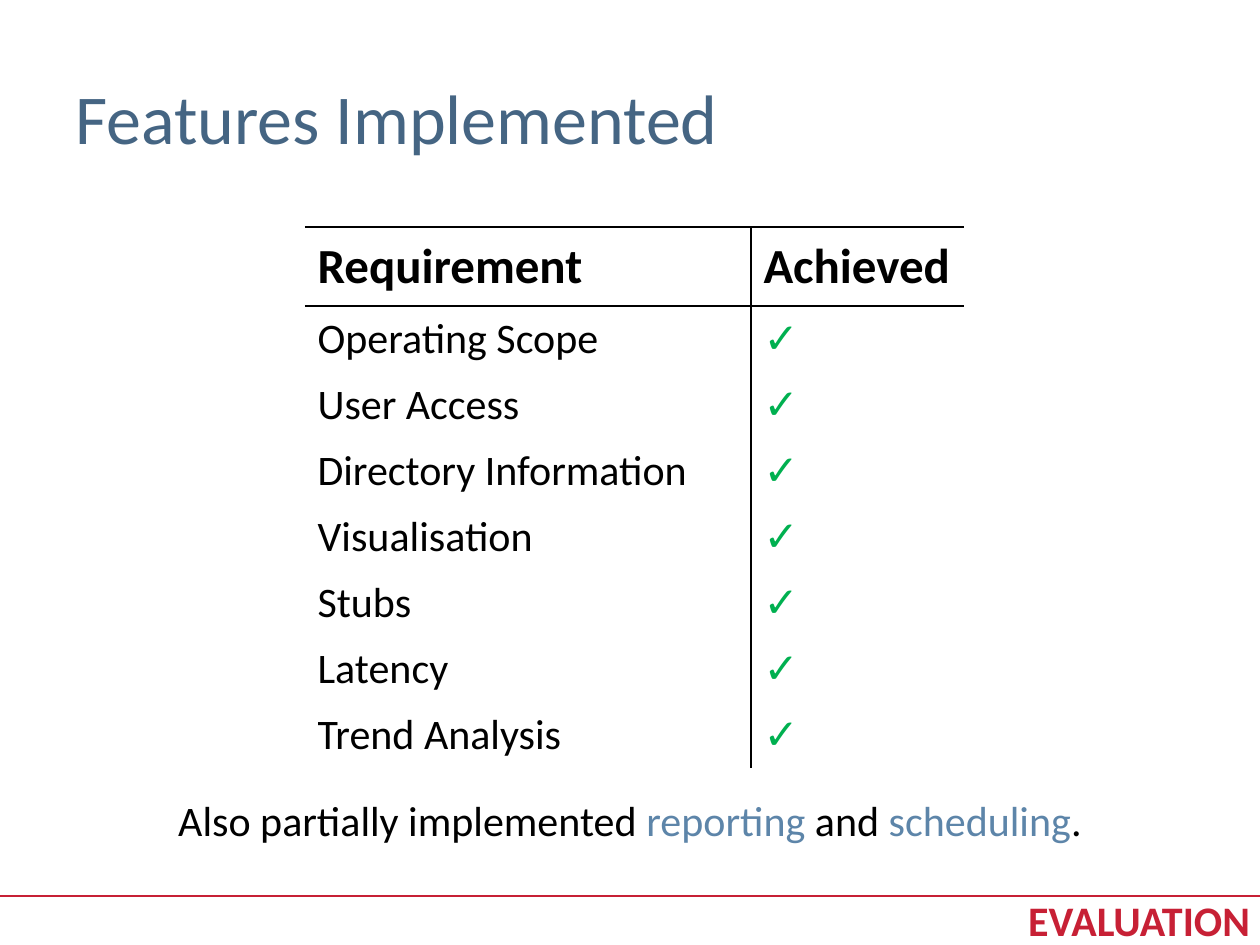
import pptx
import pptx.dml.color
import pptx.enum.shapes
import pptx.enum.text
import pptx.oxml
import pptx.oxml.ns
import pptx.util
from lxml import etree

RGBColor = pptx.dml.color.RGBColor
BLACK = RGBColor(0x00, 0x00, 0x00)
SLATE = RGBColor(0x45, 0x65, 0x83)
BLUE = RGBColor(0x5D, 0x85, 0xA9)
GREEN = RGBColor(0x00, 0xB0, 0x50)
RED = RGBColor(0xC7, 0x20, 0x35)

FONT = "Calibri"
PIXELS_PER_INCH = 126
SLIDE_WIDTH, SLIDE_HEIGHT = 1260, 945
COLUMN_WIDTHS = (446, 213)
HEADER_HEIGHT, ROW_HEIGHT = 79, 66
HEADINGS = ("Requirement", "Achieved")
FEATURES = (
    "Operating Scope",
    "User Access",
    "Directory Information",
    "Visualisation",
    "Stubs",
    "Latency",
    "Trend Analysis",
)


def px(length):
    """Turn a length in pixels into EMU."""
    return pptx.util.Emu(round(length * 914400 / PIXELS_PER_INCH))


def style_font(font, size, color, bold=False):
    """Set the face, size, colour and weight of a font."""
    font.name = FONT
    font.size = pptx.util.Pt(size)
    font.color.rgb = color
    font.bold = bold


def set_borders(cell, visible_sides):
    """Draw black borders on the given sides of a cell and clear the others."""
    properties = cell._tc.get_or_add_tcPr()
    for index, side in enumerate("LRTB"):
        line = pptx.oxml.parse_xml(
            f'<a:ln{side} {pptx.oxml.ns.nsdecls("a")} w="12700"/>'
        )
        if side in visible_sides:
            fill = etree.SubElement(line, pptx.oxml.ns.qn("a:solidFill"))
            etree.SubElement(fill, pptx.oxml.ns.qn("a:srgbClr"), val=str(BLACK))
        else:
            etree.SubElement(line, pptx.oxml.ns.qn("a:noFill"))
        properties.insert(index, line)


def add_title(slide, left, top, width, height):
    """Place and format the slide title."""
    title = slide.shapes.title
    title.left, title.top = px(left), px(top)
    title.width, title.height = px(width), px(height)
    frame = title.text_frame
    frame.text = "Features Implemented"
    frame.vertical_anchor = pptx.enum.text.MSO_ANCHOR.MIDDLE
    paragraph = frame.paragraphs[0]
    paragraph.alignment = pptx.enum.text.PP_ALIGN.LEFT
    style_font(paragraph.font, 40, SLATE)


def add_feature_table(slide, left, top):
    """Add the table of requirements and their check marks."""
    rows = [HEADINGS] + [(feature, "✓") for feature in FEATURES]
    heights = [HEADER_HEIGHT] + [ROW_HEIGHT] * len(FEATURES)
    table = slide.shapes.add_table(
        len(rows), len(COLUMN_WIDTHS),
        px(left), px(top), px(sum(COLUMN_WIDTHS)), px(sum(heights)),
    ).table
    table.first_row = False
    table.horz_banding = False
    for column, width in zip(table.columns, COLUMN_WIDTHS):
        column.width = px(width)
    for row_index, (texts, height) in enumerate(zip(rows, heights)):
        table.rows[row_index].height = px(height)
        is_header = row_index == 0
        horizontal_sides = {0: "TB", 1: "T"}.get(row_index, "")
        for column_index, text in enumerate(texts):
            cell = table.cell(row_index, column_index)
            cell.text = text
            cell.vertical_anchor = pptx.enum.text.MSO_ANCHOR.MIDDLE
            cell.fill.background()
            set_borders(cell, "RL"[column_index] + horizontal_sides)
            color = GREEN if text == "✓" else BLACK
            font = cell.text_frame.paragraphs[0].font
            style_font(font, 28 if is_header else 24, color, is_header)


def add_text_box(slide, left, top, width, height, alignment):
    """Add a wrapping text box and return its text frame."""
    box = slide.shapes.add_textbox(px(left), px(top), px(width), px(height))
    frame = box.text_frame
    frame.word_wrap = True
    frame.auto_size = pptx.enum.text.MSO_AUTO_SIZE.SHAPE_TO_FIT_TEXT
    frame.paragraphs[0].alignment = alignment
    return frame


def add_remark(slide, left, top, width, height):
    """Add the centred remark with its highlighted words."""
    frame = add_text_box(
        slide, left, top, width, height, pptx.enum.text.PP_ALIGN.CENTER
    )
    for text, color in (
        ("Also partially implemented ", BLACK),
        ("reporting", BLUE),
        (" and ", BLACK),
        ("scheduling", BLUE),
        (".", BLACK),
    ):
        run = frame.paragraphs[0].add_run()
        run.text = text
        style_font(run.font, 24, color)


def add_footer(slide, left, top, width, height):
    """Add the footer rule and the right-aligned section name."""
    rule = slide.shapes.add_connector(
        pptx.enum.shapes.MSO_CONNECTOR.STRAIGHT,
        px(left), px(top + 1), px(left + width), px(top + 1),
    )
    rule.line.color.rgb = RED
    rule.line.width = pptx.util.Pt(0.75)
    etree.SubElement(rule._element.spPr, pptx.oxml.ns.qn("a:effectLst"))

    label_offset = 423
    frame = add_text_box(
        slide, left + label_offset, top, width - label_offset, height,
        pptx.enum.text.PP_ALIGN.RIGHT,
    )
    frame.margin_top = frame.margin_bottom = 0
    frame.margin_right = px(10)
    paragraph = frame.paragraphs[0]
    paragraph.text = "EVALUATION"
    style_font(paragraph.font, 24, RED, True)


def main():
    """Build and save the presentation."""
    presentation = pptx.Presentation()
    presentation.slide_width = px(SLIDE_WIDTH)
    presentation.slide_height = px(SLIDE_HEIGHT)
    slide = presentation.slides.add_slide(presentation.slide_layouts[5])
    add_title(slide, 63, 38, 1134, 158)
    add_feature_table(slide, 305, 227)
    add_remark(slide, 0, 788, SLIDE_WIDTH, 63)
    add_footer(slide, 0, 895, SLIDE_WIDTH, 50)
    presentation.save("out.pptx")


if __name__ == "__main__":
    main()
